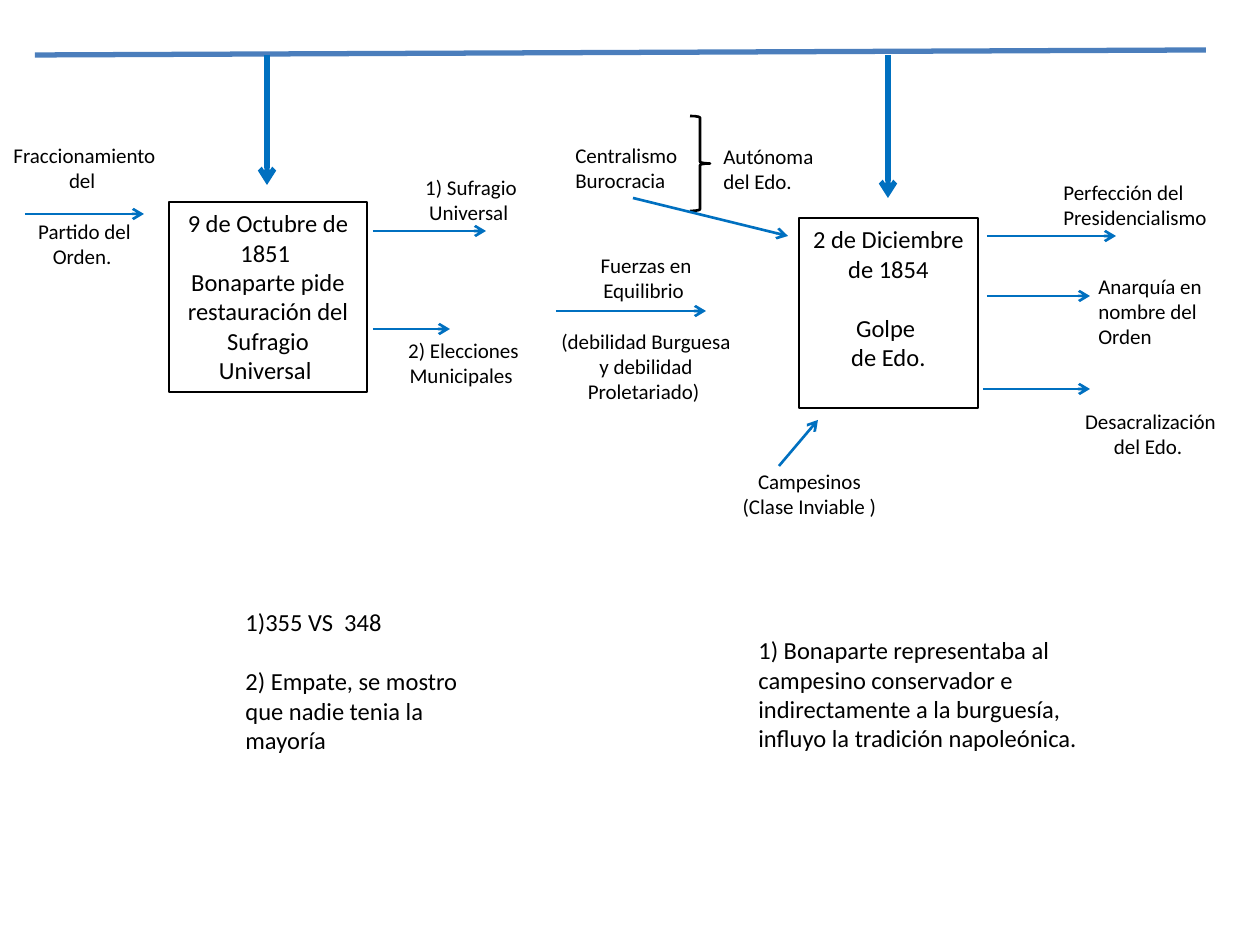
import pptx
import pptx.util
import pptx.dml.color
import pptx.enum.shapes
import pptx.enum.text
import pptx.oxml
import pptx.oxml.ns
from dataclasses import dataclass

PX = 914400 / 126
SHAPE = pptx.enum.shapes.MSO_SHAPE
CENTER = pptx.enum.text.PP_ALIGN.CENTER
LEFT = pptx.enum.text.PP_ALIGN.LEFT


@dataclass(frozen=True)
class Theme:
    font: str = "Calibri"
    ink: str = "000000"
    arrow: str = "0070C0"
    timeline: str = "4B7EBC"
    label: int = 12
    body: int = 14
    thin: float = 1.5
    thick: float = 3
    line_height: float = 1.22


THEME = Theme()


def emu(*lengths):
    return [pptx.util.Emu(round(length * PX)) for length in lengths]


def rgb(value):
    return pptx.dml.color.RGBColor.from_string(value)


def write(shape, paragraphs, size, align, gap_before=None):
    """Fill a shape with text; gap_before is the paragraph set off by one line."""
    frame = shape.text_frame
    frame.word_wrap = True
    frame.vertical_anchor = pptx.enum.text.MSO_ANCHOR.TOP
    for index, text in enumerate(paragraphs):
        paragraph = frame.paragraphs[0] if index == 0 else frame.add_paragraph()
        paragraph.text = text
        paragraph.alignment = align
        paragraph.font.name = THEME.font
        paragraph.font.size = pptx.util.Pt(size)
        paragraph.font.color.rgb = rgb(THEME.ink)
        if index == gap_before:
            paragraph.space_before = pptx.util.Pt(round(size * THEME.line_height, 1))


def add_text(slide, origin, box, paragraphs, size=THEME.label, align=CENTER,
             gap_before=None):
    x, y, width, height = box
    label = slide.shapes.add_textbox(*emu(origin[0] + x, origin[1] + y, width, height))
    write(label, paragraphs, size, align, gap_before)


def add_outline(slide, origin, box, kind):
    x, y, width, height = box
    outline = slide.shapes.add_shape(
        kind, *emu(origin[0] + x, origin[1] + y, width, height))
    outline.shadow.inherit = False
    outline.fill.background()
    outline.line.color.rgb = rgb(THEME.ink)
    outline.line.width = pptx.util.Pt(THEME.thin)
    return outline


def add_line(slide, origin, ends, color=THEME.arrow, width=THEME.thin, arrow=True):
    x1, y1, x2, y2 = ends
    left, top = origin
    line = slide.shapes.add_connector(
        pptx.enum.shapes.MSO_CONNECTOR.STRAIGHT,
        *emu(left + x1, top + y1, left + x2, top + y2))
    line.line.color.rgb = rgb(color)
    line.line.width = pptx.util.Pt(width)
    properties = line._element.spPr
    if arrow:
        head = pptx.oxml.parse_xml(
            f'<a:tailEnd {pptx.oxml.ns.nsdecls("a")} type="arrow"/>')
        line.line._get_or_add_ln().append(head)
    properties.append(pptx.oxml.parse_xml(
        f'<a:effectLst {pptx.oxml.ns.nsdecls("a")}/>'))


def timeline(slide, origin):
    add_line(slide, origin, (0, 5, 1171, 0), THEME.timeline, THEME.thick, arrow=False)
    # Drops to the two dated events
    for x, bottom in ((232, 135), (853, 148)):
        add_line(slide, origin, (x, 5, x, bottom), width=THEME.thick)


def suffrage_event(slide, origin):
    event = add_outline(slide, origin, (169, 66, 198, 190), SHAPE.RECTANGLE)
    write(event, ["9 de Octubre de 1851 ",
                  "Bonaparte pide restauración del Sufragio Universal "],
          THEME.body, CENTER)
    # Cause
    add_text(slide, origin, (0, 0, 169, 140),
             ["Fraccionamiento del ", "Partido del Orden. "], gap_before=1)
    add_line(slide, origin, (25, 78, 144, 78))
    # Outcomes
    for box, text in (((412, 32, 118, 63), "1) Sufragio Universal "),
                      ((384, 195, 159, 63), "2) Elecciones Municipales ")):
        add_text(slide, origin, box, [text])
    for y, end in ((95, 486), (193, 450)):
        add_line(slide, origin, (373, y, end, y))


def coup_event(slide, origin):
    event = add_outline(slide, origin, (252, 102, 179, 190), SHAPE.RECTANGLE)
    write(event, ["2 de Diciembre", " de 1854 ", "Golpe ", "de Edo."],
          THEME.body, CENTER, gap_before=2)
    add_outline(slide, origin, (143, 0, 20, 95), SHAPE.RIGHT_BRACE)
    # Causes and consequences
    for box, text, align in (
            ((16, 20, 137, 63), "Centralismo Burocracia", LEFT),
            ((164, 21, 118, 63), "Autónoma del Edo.", LEFT),
            ((180, 346, 165, 63), "Campesinos (Clase Inviable )", CENTER),
            ((504, 57, 179, 63), "Perfección del Presidencialismo", LEFT),
            ((539, 151, 139, 89), "Anarquía en nombre del Orden", LEFT),
            ((524, 286, 159, 63), "Desacralización del Edo. ", CENTER)):
        add_text(slide, origin, box, [text], align=align)
    add_text(slide, origin, (0, 130, 198, 165),
             ["Fuerzas en Equilibrio ",
              "(debilidad Burguesa y debilidad Proletariado) "], gap_before=1)
    # Arrows into the event, then out of it
    for ends in ((9, 195, 159, 195), (232, 350, 271, 304), (86, 82, 241, 120),
                 (440, 120, 569, 120), (440, 180, 543, 180), (436, 273, 543, 273)):
        add_line(slide, origin, ends)


def notes(slide, origin):
    add_text(slide, origin, (0, 0, 268, 161),
             ["1)355 VS  348", "2) Empate, se mostro que nadie tenia la mayoría"],
             THEME.body, LEFT, gap_before=1)
    add_text(slide, origin, (513, 28, 377, 131),
             ["1) Bonaparte representaba al campesino conservador e indirectamente "
              "a la burguesía, influyo la tradición napoleónica."],
             THEME.body, LEFT)


def main():
    deck = pptx.Presentation()
    deck.slide_width, deck.slide_height = emu(1260, 945)
    slide = deck.slides.add_slide(deck.slide_layouts[6])
    suffrage_event(slide, (0, 136))
    coup_event(slide, (547, 116))
    notes(slide, (233, 601))
    timeline(slide, (35, 50))
    deck.save("out.pptx")


if __name__ == "__main__":
    main()
